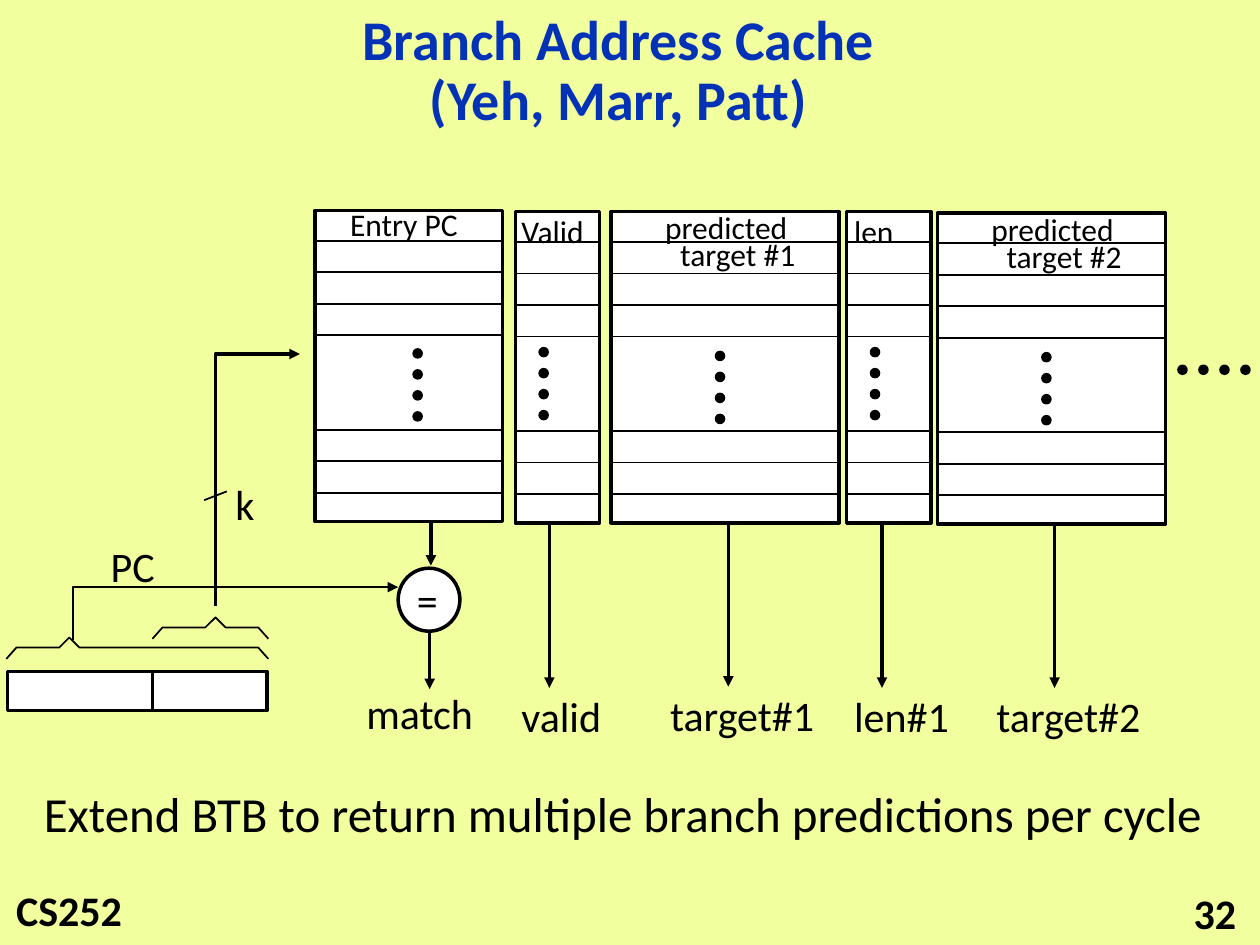
from dataclasses import dataclass

from lxml.etree import SubElement
from pptx import Presentation
from pptx.dml.color import RGBColor
from pptx.enum.shapes import MSO_CONNECTOR as Connector, MSO_SHAPE as Preset
from pptx.enum.text import MSO_ANCHOR as Anchor, MSO_AUTO_SIZE as AutoSize, PP_ALIGN as Align
from pptx.oxml.ns import qn
from pptx.util import Inches, Pt


@dataclass(frozen=True)
class Theme:
    font: str = "Calibri"
    background: RGBColor = RGBColor(0xF1, 0xFF, 0x9E)
    title: RGBColor = RGBColor(0x03, 0x32, 0xB7)
    ink: RGBColor = RGBColor(0, 0, 0)
    paper: RGBColor = RGBColor(255, 255, 255)
    title_size: int = 32
    body_size: int = 28
    label_size: int = 24
    header_size: int = 18
    thin: float = 1
    medium: float = 1.5
    thick: float = 2


@dataclass(frozen=True)
class Label:
    text: str
    left: float
    top: float
    width: float
    height: float = 0.5
    size: int = 24
    bold: bool = False
    align: Align = Align.LEFT
    anchor: Anchor = Anchor.TOP
    wrap: bool = False


@dataclass(frozen=True)
class Column:
    left: float
    top: float
    width: float
    dot_left: float
    dot_top: float
    arrow_x: float
    arrow_end: float
    labels: tuple[Label, ...]


THEME = Theme()
COLUMN_HEIGHT = 2.47
FIRST_RULE = 0.24
ROW_HEIGHT = 0.25
RULED_ROWS = (0, 1, 2, 3, 6, 7, 8)  # the gap holds the dots
DOT_SIZE = 0.07
DOT_STEP = 0.5 / 3


def header(text: str, left: float, top: float, width: float) -> Label:
    return Label(text, left, top, width, 0.4, THEME.header_size)


COLUMNS = (
    Column(2.5, 1.67, 1.49, 3.28, 2.77, 3.42, 4.49,
           (header("Entry PC", 2.68, 1.58, 1.07), Label("match", 2.81, 5.41, 1.06))),
    Column(4.09, 1.68, 0.67, 4.28, 2.76, 4.36, 5.46,
           (header("Valid", 4.04, 1.63, 0.71), Label("valid", 4.04, 5.43, 0.84))),
    Column(4.85, 1.68, 1.81, 5.68, 2.79, 5.78, 5.45,
           (header("predicted", 5.18, 1.6, 1.19), header("target #1", 5.3, 1.82, 1.13),
            Label("target#1", 5.22, 5.42, 1.37))),
    Column(6.72, 1.68, 0.67, 6.91, 2.76, 7, 5.46,
           (header("len", 6.68, 1.63, 0.52), Label("len#1", 6.68, 5.43, 0.96))),
    Column(7.44, 1.69, 1.81, 8.27, 2.8, 8.37, 5.46,
           (header("predicted", 7.77, 1.62, 1.19), header("target #2", 7.89, 1.83, 1.13),
            Label("target#2", 7.81, 5.43, 1.37))),
)

LABELS = (
    Label("PC", 0.78, 4.24, 0.55),
    Label("k", 1.77, 3.75, 0.3, 0.37),
    Label("=", 3.21, 4.51, 0.37),
    Label("Extend BTB to return multiple branch predictions per cycle",
          0.25, 6.17, 9.53, 0.57, THEME.body_size, wrap=True),
    Label("CS252", 0.03, 6.97, 1.05, bold=True),
    Label("32", 7.83, 7.08, 2.08, 0.32, bold=True, align=Align.RIGHT, anchor=Anchor.MIDDLE),
)


def add_run(paragraph, text: str, size: int, color: RGBColor, bold: bool) -> None:
    run = paragraph.add_run()
    run.text = text
    run.font.name = THEME.font
    run.font.size = Pt(size)
    run.font.bold = bold
    run.font.color.rgb = color


def add_label(slide, label: Label) -> None:
    shape = slide.shapes.add_textbox(*map(Inches, (label.left, label.top, label.width, label.height)))
    frame = shape.text_frame
    frame.word_wrap = label.wrap
    frame.vertical_anchor = label.anchor
    paragraph = frame.paragraphs[0]
    paragraph.alignment = label.align
    add_run(paragraph, label.text, label.size, THEME.ink, label.bold)


def set_line(shape, weight: float, arrow: bool = False) -> None:
    shape.line.color.rgb = THEME.ink
    shape.line.width = Pt(weight)
    if arrow:
        SubElement(shape.line._get_or_add_ln(), qn("a:tailEnd"), type="triangle")


def add_preset(slide, preset: Preset, left: float, top: float, width: float, height: float,
               fill: RGBColor = THEME.paper, weight: float = THEME.thick) -> None:
    shape = slide.shapes.add_shape(preset, *map(Inches, (left, top, width, height)))
    shape.shadow.inherit = False
    shape.fill.solid()
    shape.fill.fore_color.rgb = fill
    set_line(shape, weight)


def add_line(slide, start: tuple[float, float], end: tuple[float, float],
             weight: float = THEME.thin, arrow: bool = False) -> None:
    line = slide.shapes.add_connector(Connector.STRAIGHT, *map(Inches, start + end))
    set_line(line, weight, arrow)
    SubElement(line._element.spPr, qn("a:effectLst"))


def add_path(slide, points: list[tuple[float, float]], weight: float, arrow: bool = False) -> None:
    corners = [(Inches(x), Inches(y)) for x, y in points]
    builder = slide.shapes.build_freeform(*corners[0], scale=1.0)
    builder.add_line_segments(corners[1:], close=False)
    shape = builder.convert_to_shape()
    shape.shadow.inherit = False
    shape.fill.background()
    set_line(shape, weight, arrow)


def add_brace(slide, left: float, right: float, tip: float, top: float) -> None:
    slope, middle, bottom = 0.08, top + 0.08, top + 0.17
    add_path(slide, [(left, bottom), (left + slope, middle), (tip - slope, middle), (tip, top),
                     (tip + slope, middle), (right - slope, middle), (right, bottom)], THEME.thin)


def add_dots(slide, left: float, top: float, step_x: float = 0, step_y: float = 0) -> None:
    for index in range(4):
        add_preset(slide, Preset.OVAL, left + index * step_x, top + index * step_y,
                   DOT_SIZE, DOT_SIZE, THEME.ink, THEME.thin)


def add_column(slide, column: Column) -> None:
    add_preset(slide, Preset.RECTANGLE, column.left, column.top, column.width, COLUMN_HEIGHT)
    for row in RULED_ROWS:
        y = column.top + FIRST_RULE + row * ROW_HEIGHT
        add_line(slide, (column.left, y), (column.left + column.width, y))
    add_dots(slide, column.dot_left, column.dot_top, step_y=DOT_STEP)
    add_line(slide, (column.arrow_x, column.top + COLUMN_HEIGHT),
             (column.arrow_x, column.arrow_end), THEME.thick, arrow=True)
    for label in column.labels:
        add_label(slide, label)


def format_title(slide) -> None:
    title = slide.shapes.title
    title.left, title.top, title.width, title.height = map(Inches, (0.92, 0.17, 7.98, 0.81))
    frame = title.text_frame
    frame.auto_size = AutoSize.NONE
    frame.vertical_anchor = Anchor.MIDDLE
    paragraph = frame.paragraphs[0]
    paragraph.alignment = Align.CENTER
    paragraph.line_spacing = 0.9
    add_run(paragraph, "Branch Address Cache", THEME.title_size, THEME.title, True)
    paragraph.add_line_break()
    add_run(paragraph, "(Yeh, Marr, Patt)", THEME.title_size, THEME.title, True)


def main() -> None:
    presentation = Presentation()
    presentation.slide_width, presentation.slide_height = Inches(10), Inches(7.5)
    slide = presentation.slides.add_slide(presentation.slide_layouts[5])
    slide.background.fill.solid()
    slide.background.fill.fore_color.rgb = THEME.background
    format_title(slide)

    # Program counter register, with braces over its fields
    add_preset(slide, Preset.RECTANGLE, 0.06, 5.33, 2.06, 0.31)
    add_line(slide, (1.21, 5.33), (1.21, 5.63), THEME.thick)
    add_brace(slide, 1.21, 2.13, 1.71, 4.9)
    add_brace(slide, 0.05, 2.13, 0.55, 5.06)

    # Index path of k bits into the cache
    add_path(slide, [(1.71, 4.81), (1.71, 2.81), (2.38, 2.81)], THEME.thick, arrow=True)
    add_line(slide, (1.8, 3.9), (1.62, 3.97))

    # Cache columns, and the dots for those that follow
    for column in COLUMNS:
        add_column(slide, column)
    add_dots(slide, 9.35, 2.9, step_x=DOT_STEP)

    # Comparator
    add_preset(slide, Preset.OVAL, 3.16, 4.51, 0.49, 0.5)
    add_line(slide, (3.41, 5.02), (3.41, 5.47), THEME.thick, arrow=True)
    add_path(slide, [(0.58, 5.08), (0.58, 4.66), (3.16, 4.66)], THEME.medium, arrow=True)

    for label in LABELS:
        add_label(slide, label)
    presentation.save("out.pptx")


if __name__ == "__main__":
    main()
